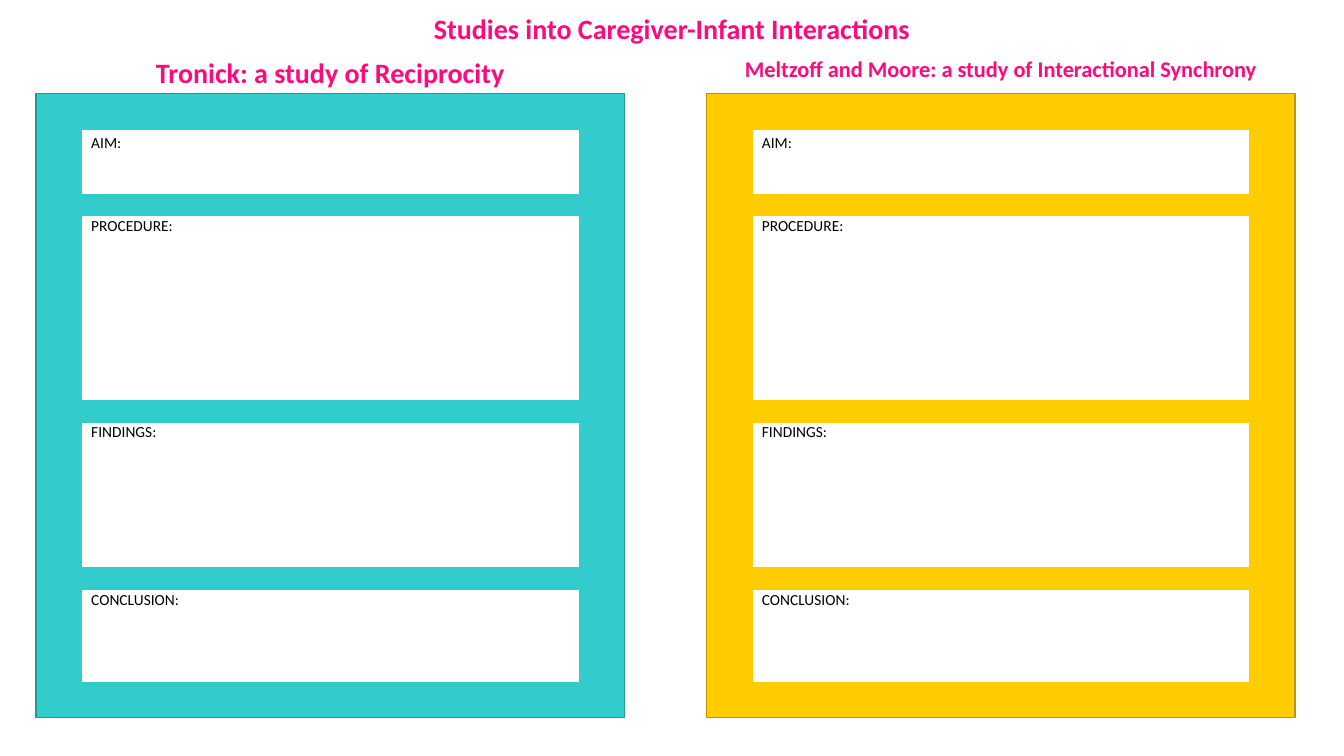
from pptx import Presentation
from pptx.dml.color import RGBColor
from pptx.enum.shapes import MSO_SHAPE
from pptx.enum.text import MSO_ANCHOR as Anchor, MSO_AUTO_SIZE as AutoSize, PP_ALIGN as Align
from pptx.util import Cm, Pt

PINK = RGBColor(0xFF, 0x09, 0x7C)
TEAL = RGBColor(0x33, 0xCC, 0xCC)
DARK_TEAL = RGBColor(0x26, 0x97, 0x97)
YELLOW = RGBColor(0xFF, 0xCC, 0x00)
DARK_YELLOW = RGBColor(0xBD, 0x97, 0x00)
WHITE = RGBColor(0xFF, 0xFF, 0xFF)
BLACK = RGBColor(0, 0, 0)

# Content: heading, heading size, panel left (cm), panel fill, panel edge
TITLE = "Studies into Caregiver-Infant Interactions"
STUDIES = [
    ("Tronick: a study of Reciprocity", 20, 0.91, TEAL, DARK_TEAL),
    ("Meltzoff and Moore: a study of Interactional Synchrony", 16, 17.81, YELLOW, DARK_YELLOW),
]
# Section label, box height and space above the label (cm)
SECTIONS = [
    ("AIM:", 1.65, 0.11),
    ("PROCEDURE:", 4.67, 0.02),
    ("FINDINGS:", 3.68, 0),
    ("CONCLUSION:", 2.36, 0.02),
]

# Layout in cm
SLIDE_W, SLIDE_H = 33.87, 19.05
PANEL_TOP, PANEL_W, PANEL_H = 2.36, 14.83, 15.72
BOX_TOP, BOX_W, BOX_GAP = 3.25, 12.55, 0.53
BOX_INDENT = (PANEL_W - BOX_W) / 2
TITLE_TOP, HEADING_TOP, HEADING_H = 0.15, 1.27, 1.12


def write(shape, text, size=11, color=BLACK, bold=False, align=Align.LEFT, top=0.13):
    frame = shape.text_frame
    frame.word_wrap = True
    frame.auto_size = AutoSize.NONE
    frame.vertical_anchor = Anchor.TOP
    frame.margin_left = frame.margin_right = Cm(0.25)
    frame.margin_top, frame.margin_bottom = Cm(top), Cm(0)
    paragraph = frame.paragraphs[0]
    paragraph.alignment = align
    paragraph.line_spacing = 1.0
    paragraph.space_before = Pt(0)
    run = paragraph.add_run()
    run.text = text
    run.font.name = "Calibri"
    run.font.size = Pt(size)
    run.font.bold = bold
    run.font.color.rgb = color


def add_box(slide, left, top, width, height, fill, edge):
    box = slide.shapes.add_shape(
        MSO_SHAPE.RECTANGLE, Cm(left), Cm(top), Cm(width), Cm(height))
    box.shadow.inherit = False
    box.fill.solid()
    box.fill.fore_color.rgb = fill
    box.line.color.rgb = edge
    box.line.width = Pt(1)
    return box


def main():
    deck = Presentation()
    deck.slide_width, deck.slide_height = Cm(SLIDE_W), Cm(SLIDE_H)
    slide = deck.slides.add_slide(deck.slide_layouts[5])

    # Slide title
    title = slide.shapes.title
    title.left, title.top = Cm(0), Cm(TITLE_TOP)
    title.width, title.height = Cm(SLIDE_W), Cm(HEADING_H)
    write(title, TITLE, size=20, color=PINK, bold=True, align=Align.CENTER)

    # One panel per study
    for study, size, left, fill, edge in STUDIES:
        add_box(slide, left, PANEL_TOP, PANEL_W, PANEL_H, fill, edge)
        heading = slide.shapes.add_textbox(
            Cm(left), Cm(HEADING_TOP), Cm(PANEL_W), Cm(HEADING_H))
        write(heading, study, size=size, color=PINK, bold=True, align=Align.CENTER)

        # Boxes to fill in, stacked with equal gaps
        top = BOX_TOP
        for label, height, inset in SECTIONS:
            section = add_box(slide, left + BOX_INDENT, top, BOX_W, height, WHITE, fill)
            write(section, label, top=inset)
            top += height + BOX_GAP

    deck.save("out.pptx")


if __name__ == "__main__":
    main()
